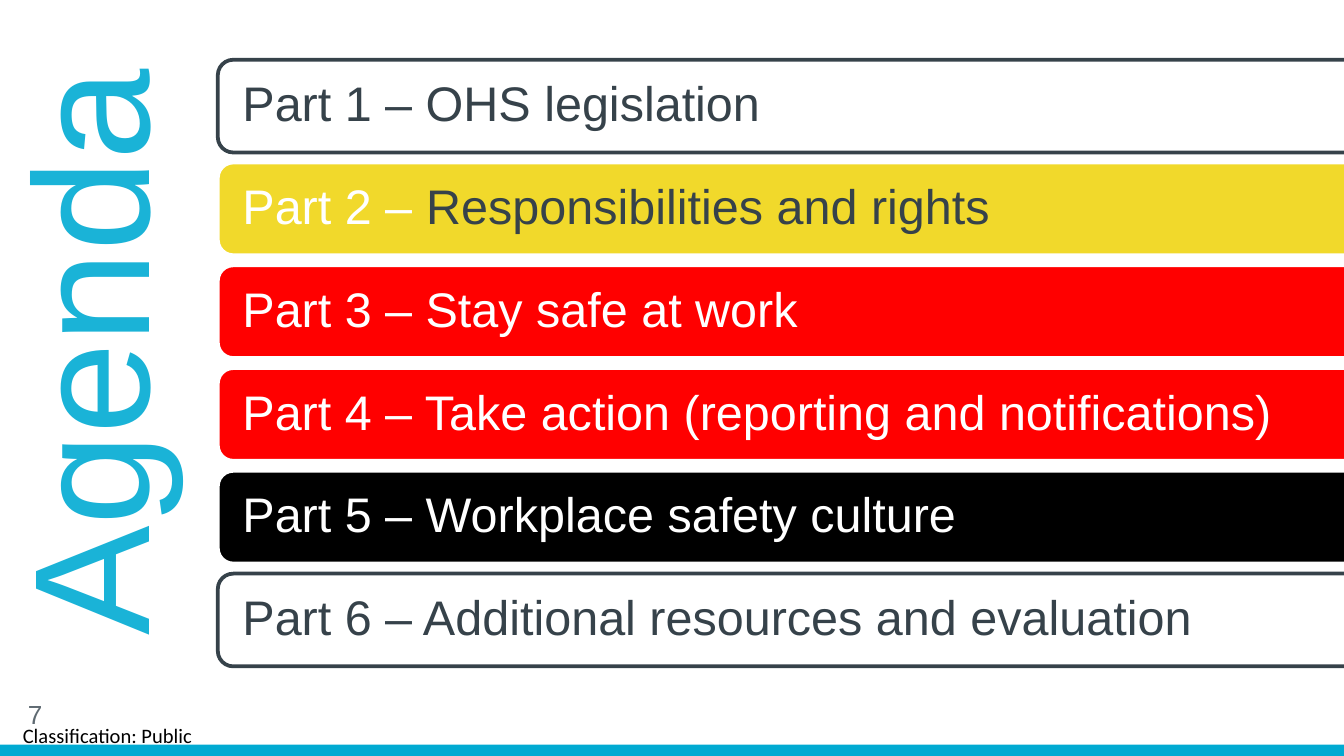
from pptx import Presentation
from pptx.dml.color import RGBColor
from pptx.enum.shapes import MSO_SHAPE as Shape
from pptx.enum.text import MSO_ANCHOR as Anchor, MSO_AUTO_SIZE as Fit, PP_ALIGN as Align
from pptx.util import Pt

WHITE = RGBColor(0xFF, 0xFF, 0xFF)
BLACK = RGBColor(0, 0, 0)
SLATE = RGBColor(0x36, 0x42, 0x4A)
GREY = RGBColor(0x5F, 0x6A, 0x72)
YELLOW = RGBColor(0xF1, 0xD9, 0x2B)
RED = RGBColor(0xFF, 0, 0)
CYAN = RGBColor(0x1A, 0xB3, 0xD7)
TEAL = RGBColor(0, 0xAA, 0xD2)

# Fill, line, then runs of (text, colour)
PARTS = [
    (WHITE, SLATE, [("Part 1 – OHS legislation", SLATE)]),
    (YELLOW, WHITE, [("Part 2 – ", WHITE), ("Responsibilities and rights", SLATE)]),
    (RED, WHITE, [("Part 3 – Stay safe at work", WHITE)]),
    (RED, WHITE, [("Part 4 – Take action (reporting and notifications)", WHITE)]),
    (BLACK, WHITE, [("Part 5 – Workplace safety culture", WHITE)]),
    (WHITE, SLATE, [("Part 6 – Additional resources and evaluation", SLATE)]),
]


def place(shape, box):
    shape.left, shape.top, shape.width, shape.height = map(Pt, box)


def style(font, size, color, name="Arial"):
    font.size, font.name, font.color.rgb = Pt(size), name, color


def add_title(slide, box):
    title = slide.shapes.title
    place(title, box)
    title.rotation = 270
    frame = title.text_frame
    frame.text = "Agenda"
    frame.auto_size = Fit.NONE
    frame.vertical_anchor = Anchor.TOP
    para = frame.paragraphs[0]
    para.alignment = Align.CENTER
    style(para.runs[0].font, 88, CYAN)


def add_bar(slide, box, fill, line, runs):
    bar = slide.shapes.add_shape(Shape.ROUNDED_RECTANGLE, *map(Pt, box))
    bar.shadow.inherit = False
    bar.fill.solid()
    bar.fill.fore_color.rgb = fill
    bar.line.color.rgb = line
    bar.line.width = Pt(2)
    frame = bar.text_frame
    frame.word_wrap = True
    frame.vertical_anchor = Anchor.MIDDLE
    frame.margin_left = frame.margin_right = Pt(10.8)
    para = frame.paragraphs[0]
    para.alignment = Align.LEFT
    para.line_spacing = 0.9
    for text, color in runs:
        run = para.add_run()
        run.text = text
        style(run.font, 26, color)


def add_parts(slide, box, height):
    left, top, width, total = box
    pitch = (total - height) / (len(PARTS) - 1)
    for i, part in enumerate(PARTS):
        add_bar(slide, (left, top + i * pitch, width, height), *part)


def add_note(slide, box, text, size, color, name="Arial"):
    note = slide.shapes.add_textbox(*map(Pt, box))
    frame = note.text_frame
    frame.word_wrap = True
    frame.vertical_anchor = Anchor.MIDDLE
    frame.text = text
    style(frame.paragraphs[0].runs[0].font, size, color, name)
    return frame


def add_footer(slide, box):
    left, top, width, height = box
    # Bottom strip
    strip = slide.shapes.add_shape(
        Shape.RECTANGLE, Pt(left), Pt(top + height - 6), Pt(width), Pt(6))
    strip.shadow.inherit = False
    strip.fill.solid()
    strip.fill.fore_color.rgb = TEAL
    strip.line.fill.background()
    # Classification
    frame = add_note(slide, (left, top + 12.2, 115.2, 22.3),
                     "Classification: Public", 11, BLACK, "Calibri")
    frame.margin_left = frame.margin_right = 0
    frame.margin_top = frame.margin_bottom = 0
    frame.paragraphs[0].alignment = Align.CENTER
    # Slide number
    add_note(slide, (left + 7.9, top, 54, 23.8), "7", 14, GREY)


def main():
    deck = Presentation()
    deck.slide_width, deck.slide_height = Pt(720), Pt(405)
    slide = deck.slides.add_slide(deck.slide_layouts[5])
    add_footer(slide, (0, 370.8, 720, 34.2))
    add_parts(slide, (116.7, 32, 615, 325), 49.7)
    add_title(slide, (-137.5, 131.8, 365.8, 113.8))
    deck.save("out.pptx")


if __name__ == "__main__":
    main()
